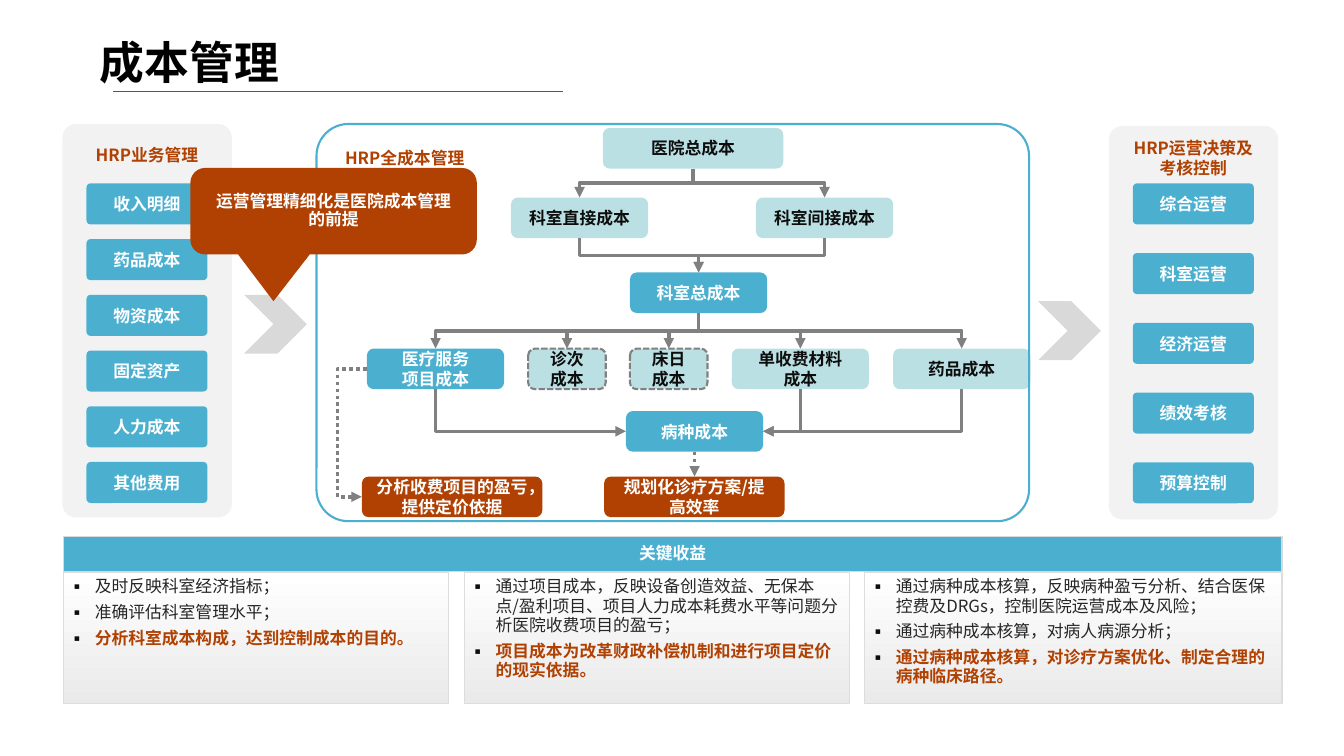
"""Build the hospital cost management slide."""
from dataclasses import dataclass
from typing import Optional

from lxml import etree
from pptx import Presentation
from pptx import util as u
from pptx.dml.color import RGBColor
from pptx.enum import dml, shapes, text
from pptx.oxml.ns import qn

FONT = "Noto Sans CJK SC"
BLUE = RGBColor(0x4B, 0xB0, 0xD0)
PALE = RGBColor(0xBB, 0xE0, 0xE3)
RUST = RGBColor(0xB0, 0x41, 0x02)
GRAY = RGBColor(0x80, 0x80, 0x80)
SILVER = RGBColor(0xD9, 0xD9, 0xD9)
PANEL = RGBColor(0xF2, 0xF2, 0xF2)
CARD_END = RGBColor(0xEA, 0xEA, 0xEA)
CARD_EDGE = RGBColor(0xDD, 0xDD, 0xDD)
RULE = RGBColor(0xCA, 0x28, 0x20)
BODY = RGBColor(0x26, 0x26, 0x26)
INK = RGBColor(0x0D, 0x0D, 0x0D)
WHITE = RGBColor(0xFF, 0xFF, 0xFF)
BLACK = RGBColor(0, 0, 0)

RECT = shapes.MSO_SHAPE.RECTANGLE
ROUND = shapes.MSO_SHAPE.ROUNDED_RECTANGLE
CHEVRON = shapes.MSO_SHAPE.CHEVRON
CALLOUT = shapes.MSO_SHAPE.ROUNDED_RECTANGULAR_CALLOUT
DASH = dml.MSO_LINE.SQUARE_DOT
DOT = dml.MSO_LINE.ROUND_DOT


@dataclass
class Box:
    """A preset shape with its place, colours and centred text."""
    left: float
    top: float
    width: float = 98
    height: float = 29
    lines: tuple[str, ...] = ()
    fill: Optional[RGBColor] = None
    ink: RGBColor = WHITE
    kind: shapes.MSO_SHAPE = ROUND
    adjust: tuple[float, ...] = ()
    line: Optional[RGBColor] = None
    weight: float = 1.5
    dash: Optional[dml.MSO_LINE] = None
    inset: tuple[float, float] = (7.2, 3.6)
    wrap: bool = True
    spacing: float = 1.0

    @property
    def center(self) -> float:
        return self.left + self.width / 2

    @property
    def middle(self) -> float:
        return self.top + self.height / 2

    @property
    def right(self) -> float:
        return self.left + self.width

    @property
    def bottom(self) -> float:
        return self.top + self.height


@dataclass
class Card:
    """A benefit card whose last point is highlighted."""
    left: float
    width: float
    points: tuple[str, ...]


def set_font(paragraph, color: RGBColor, bold: bool, size: float = 12) -> None:
    font = paragraph.font
    font.size, font.bold, font.name = u.Pt(size), bold, FONT
    font.color.rgb = color
    properties = paragraph._p.pPr.find(qn("a:defRPr"))
    etree.SubElement(properties, qn("a:ea"), typeface=FONT)


def set_insets(frame, horizontal: float, vertical: float) -> None:
    frame.margin_left = frame.margin_right = u.Pt(horizontal)
    frame.margin_top = frame.margin_bottom = u.Pt(vertical)


def draw_box(slide, box: Box):
    shape = slide.shapes.add_shape(
        box.kind, u.Pt(box.left), u.Pt(box.top), u.Pt(box.width), u.Pt(box.height))
    shape.shadow.inherit = False
    for index, value in enumerate(box.adjust):
        shape.adjustments[index] = value
    if box.fill is None:
        shape.fill.background()
    else:
        shape.fill.solid()
        shape.fill.fore_color.rgb = box.fill
    if box.line is None:
        shape.line.fill.background()
    else:
        shape.line.color.rgb = box.line
        shape.line.width = u.Pt(box.weight)
        if box.dash is not None:
            shape.line.dash_style = box.dash
    frame = shape.text_frame
    frame.word_wrap = box.wrap
    frame.vertical_anchor = text.MSO_ANCHOR.MIDDLE
    set_insets(frame, *box.inset)
    for index, line in enumerate(box.lines):
        paragraph = frame.add_paragraph() if index else frame.paragraphs[0]
        paragraph.text = line
        paragraph.alignment = text.PP_ALIGN.CENTER
        paragraph.line_spacing = box.spacing
        set_font(paragraph, box.ink, True)
    return shape


def draw_card(slide, card: Card) -> None:
    shape = draw_box(slide, Box(card.left, 409, card.width, 93.6, kind=RECT,
                                line=CARD_EDGE, weight=1, inset=(3.6, 3.6)))
    shape.fill.gradient()
    shape.fill.gradient_angle = 270
    for stop, color in zip(shape.fill.gradient_stops, (WHITE, CARD_END)):
        stop.color.rgb = color
    frame = shape.text_frame
    frame.vertical_anchor = text.MSO_ANCHOR.TOP
    for index, point in enumerate(card.points):
        paragraph = frame.add_paragraph() if index else frame.paragraphs[0]
        paragraph.text = point
        paragraph.alignment = text.PP_ALIGN.LEFT
        paragraph.line_spacing = 0.95
        paragraph.space_after = u.Pt(4.8)
        properties = paragraph._p.get_or_add_pPr()
        properties.set("marL", str(u.Pt(18.7)))
        properties.set("indent", str(u.Pt(-18.7)))
        bullet_color = etree.SubElement(properties, qn("a:buClr"))
        etree.SubElement(bullet_color, qn("a:srgbClr"), val=str(INK))
        etree.SubElement(properties, qn("a:buFont"), typeface=FONT)
        etree.SubElement(properties, qn("a:buChar"), char="▪")
        last = index == len(card.points) - 1
        set_font(paragraph, RUST if last else BODY, last)


def draw_line(slide, kind, x1: float, y1: float, x2: float, y2: float, color: RGBColor = GRAY,
              weight: float = 2.5, dash: Optional[dml.MSO_LINE] = None, arrow: bool = True):
    connector = slide.shapes.add_connector(kind, u.Pt(x1), u.Pt(y1), u.Pt(x2), u.Pt(y2))
    connector.line.color.rgb = color
    connector.line.width = u.Pt(weight)
    if dash is not None:
        connector.line.dash_style = dash
    if arrow:
        etree.SubElement(connector.line._get_or_add_ln(), qn("a:tailEnd"), type="triangle")
    etree.SubElement(connector._element.spPr, qn("a:effectLst"))
    return connector


def draw_drop(slide, x1: float, y1: float, x2: float, y2: float, corner: bool = False) -> None:
    """Draw an elbow that leaves downwards, with one bend if it is a corner."""
    x, y = (x1 + x2) / 2, (y1 + y2) / 2
    half_width = (y2 - y1) / 2 * (1 if x2 > x1 else -1)
    half_height = abs(x2 - x1) / 2
    connector = draw_line(slide, shapes.MSO_CONNECTOR.ELBOW, x + half_width, y - half_height,
                          x - half_width, y + half_height)
    properties = connector._element.spPr
    properties.find(qn("a:xfrm")).set("rot", "16200000" if x2 > x1 else "5400000")
    if corner:
        properties.find(qn("a:prstGeom")).set("prst", "bentConnector2")


def draw_column(slide, left: float, top: float, heading: Box, labels: tuple[str, ...],
                step: float) -> None:
    draw_box(slide, Box(left, top, 121, 281, fill=PANEL, adjust=(0.08,)))
    draw_box(slide, heading)
    for index, label in enumerate(labels):
        draw_box(slide, Box(left + 17.2, 131 + index * step, 86.4, 29.3, (label,), BLUE,
                            adjust=(0.1,), inset=(10, 5), wrap=False))


def make_heading(left: float, top: float, width: float, *lines: str) -> Box:
    return Box(left, top, width, 29.3, lines, ink=RUST, inset=(10, 5), wrap=False)


def draw_flow(slide) -> None:
    total = Box(430.6, 91.4, 128.9, lines=("医院总成本",), fill=PALE, ink=INK)
    direct = Box(365, 141.1, lines=("科室直接成本",), fill=PALE, ink=INK)
    indirect = Box(540, 141.1, lines=("科室间接成本",), fill=PALE, ink=INK)
    department = Box(450, 194.6, lines=("科室总成本",), fill=BLUE)
    service = Box(262.1, 249, lines=("医疗服务", "项目成本"), fill=BLUE)
    visit, bed = (Box(left, 249, 55.4, lines=(name, "成本"), fill=PALE, ink=INK, line=GRAY,
                      dash=DASH) for left, name in ((377.3, "诊次"), (450, "床日")))
    material = Box(522.7, 249, lines=("单收费材料", "成本"), fill=PALE, ink=INK)
    drug = Box(637.9, 249, lines=("药品成本",), fill=PALE, ink=INK)
    disease = Box(447.1, 293.6, lines=("病种成本",), fill=BLUE)
    plan = Box(431.5, 340.4, 128.9, lines=("规划化诊疗方案/提高效率",), fill=RUST)
    pricing = Box(258.5, 340.4, 128.9, lines=("分析收费项目的盈亏，提供定价依据",), fill=RUST)
    for box in (total, direct, indirect, department, service, visit, bed, material, drug,
                disease, plan, pricing):
        draw_box(slide, box)
    links = [(total, direct), (total, indirect), (direct, department), (indirect, department)]
    links += [(department, box) for box in (service, visit, bed, material, drug)]
    for start, end in links:
        draw_drop(slide, start.center, start.bottom, end.center, end.top)
    for start in (service, material, drug):
        side = disease.left if start.center < disease.center else disease.right
        draw_drop(slide, start.center, start.bottom, side, disease.middle, corner=True)
    draw_line(slide, shapes.MSO_CONNECTOR.STRAIGHT, disease.center, disease.bottom,
              disease.center, plan.top, dash=DOT)
    detour = draw_line(slide, shapes.MSO_CONNECTOR.ELBOW, service.left, service.middle,
                       pricing.left, pricing.middle, dash=DOT)
    ratio = (service.left - 241.2) / (service.left - pricing.left)
    guides = detour._element.spPr.find(qn("a:prstGeom")).find(qn("a:avLst"))
    etree.SubElement(guides, qn("a:gd"), name="adj1", fmla=f"val {round(ratio * 100000)}")


def main() -> None:
    presentation = Presentation()
    presentation.slide_width, presentation.slide_height = u.Pt(960), u.Pt(540)
    slide = presentation.slides.add_slide(presentation.slide_layouts[6])

    draw_box(slide, Box(45.4, 383.2, 870.2, 25.2, ("关键收益",), BLUE, kind=RECT, line=SILVER,
                        weight=1, inset=(3.6, 3.6), spacing=0.95))
    cards = (
        Card(45.4, 275, ("及时反映科室经济指标；", "准确评估科室管理水平；",
                         "分析科室成本构成，达到控制成本的目的。")),
        Card(331.7, 275, (
            "通过项目成本，反映设备创造效益、无保本点/盈利项目、项目人力成本耗费水平等问题分析医院收费项目的盈亏；",
            "项目成本为改革财政补偿机制和进行项目定价的现实依据。")),
        Card(617.6, 298, ("通过病种成本核算，反映病种盈亏分析、结合医保控费及DRGs，控制医院运营成本及风险；",
                          "通过病种成本核算，对病人病源分析；",
                          "通过病种成本核算，对诊疗方案优化、制定合理的病种临床路径。")),
    )
    for card in cards:
        draw_card(slide, card)

    draw_column(slide, 44.6, 88.6, make_heading(61.8, 96.3, 86.4, "HRP业务管理"),
                ("收入明细", "药品成本", "物资成本", "固定资产", "人力成本", "其他费用"), 39.8)
    draw_flow(slide)
    draw_box(slide, Box(226.1, 88.6, 509, 283.7, adjust=(0.08,), line=BLUE))
    draw_box(slide, make_heading(242, 98, 94.3, "HRP全成本管理"))
    draw_column(slide, 792, 90, make_heading(809.2, 98, 86.4, "HRP运营决策及", "考核控制"),
                ("综合运营", "科室运营", "经济运营", "绩效考核", "预算控制"), 49.8)
    for left, top in ((174.4, 210.6), (741.6, 215.2)):
        draw_box(slide, Box(left, top, 44.8, 42, fill=SILVER, kind=CHEVRON))
    draw_box(slide, Box(136, 120, 204.6, 61.8, ("运营管理精细化是医院成本管理的前提",), RUST,
                        kind=CALLOUT, adjust=(-0.21, 1.04, 0.17), inset=(10, 5), spacing=0.9))

    draw_line(slide, shapes.MSO_CONNECTOR.STRAIGHT, 80.6, 65.5, 402, 65.5, RULE, 1, arrow=False)
    title = slide.shapes.add_textbox(u.Pt(64.1), u.Pt(20.9), u.Pt(890), u.Pt(46)).text_frame
    title.word_wrap = True
    title.paragraphs[0].text = "成本管理"
    set_font(title.paragraphs[0], BLACK, True, 32)
    presentation.save("out.pptx")


if __name__ == "__main__":
    main()
